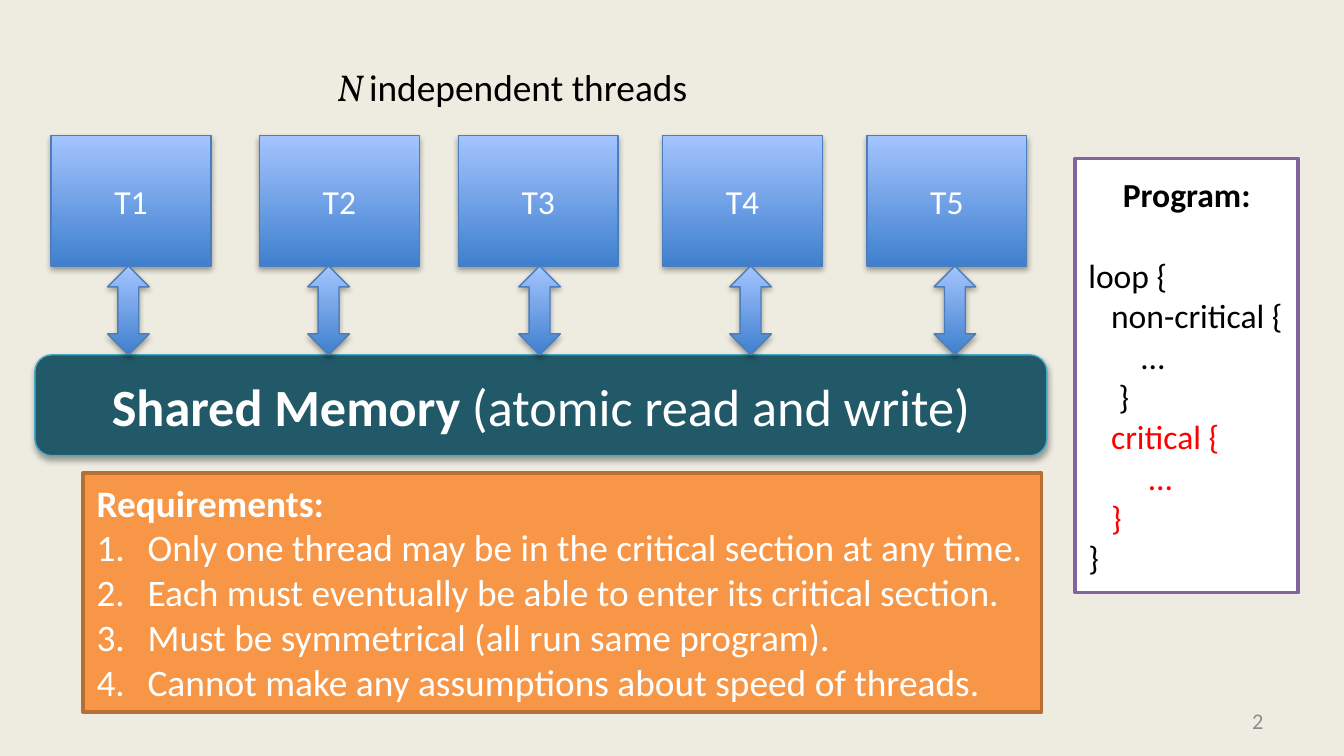
import pptx
import pptx.util
import pptx.dml.color
import pptx.enum.shapes
import pptx.enum.text
import pptx.oxml
import pptx.oxml.ns

Inches, Pt = pptx.util.Inches, pptx.util.Pt
SHAPE = pptx.enum.shapes.MSO_SHAPE
ALIGN = pptx.enum.text.PP_ALIGN
ANCHOR = pptx.enum.text.MSO_ANCHOR

COLORS = {
    "background": "EEECE1", "black": "000000", "white": "FFFFFF", "red": "FF0000",
    "number": "8C8C8C", "blue dark": "3F80CE", "blue light": "A4C4FF",
    "blue line": "4B7EBC", "memory": "215968", "memory line": "46AAC5",
    "purple": "8064A2", "orange": "F79646", "orange line": "B76F34",
}

# Content: (thread name, left of its box, left of its arrow)
THREADS = [("T1", 0.38, 0.8), ("T2", 1.93, 2.29), ("T3", 3.41, 3.86),
           ("T4", 4.93, 5.43), ("T5", 6.45, 6.95)]
PROGRAM = [
    ("loop {", "black"),
    ("   non-critical {", "black"),
    ("       …", "black"),
    ("    }", "black"),
    ("   critical {", "red"),
    ("        …", "red"),
    ("   }", "red"),
    ("}", "black"),
]
REQUIREMENTS = [
    "Only one thread may be in the critical section at any time.",
    "Each must eventually be able to enter its critical section.",
    "Must be symmetrical (all run same program).",
    "Cannot make any assumptions about speed of threads.",
]
THREAD_TOP, THREAD_HEIGHT, MEMORY_TOP = 1.01, 0.97, 2.64


def rgb(name):
    return pptx.dml.color.RGBColor.from_string(COLORS[name])


def add_span(para, text, size=18, color="white", bold=False, italic=False, font="Calibri"):
    span = para.add_run()
    span.text = text
    span.font.size, span.font.name = Pt(size), font
    span.font.bold, span.font.italic = bold, italic
    span.font.color.rgb = rgb(color)


def add_box(page, kind, place, line, fill=None, width=0.75, shadow=False):
    """Add a shape; without a fill name it gets the blue gradient."""
    box = page.shapes.add_shape(kind, *map(Inches, place))
    if fill:
        box.fill.solid()
        box.fill.fore_color.rgb = rgb(fill)
    else:
        box.fill.gradient()
        box.fill.gradient_angle = 90
        for stop, name in zip(box.fill.gradient_stops, ("blue dark", "blue light")):
            stop.color.rgb = rgb(name)
    box.line.color.rgb = rgb(line)
    box.line.width = Pt(width)
    box.shadow.inherit = False
    if shadow:
        effects = box._element.spPr.find(pptx.oxml.ns.qn("a:effectLst"))
        effects.append(pptx.oxml.parse_xml(
            f'<a:outerShdw {pptx.oxml.ns.nsdecls("a")} blurRad="{Pt(3.1)}" '
            f'dist="{Pt(1.8)}" dir="5400000" rotWithShape="0">'
            '<a:srgbClr val="000000"><a:alpha val="35000"/></a:srgbClr></a:outerShdw>'))
    return box


def first_para(box, align=ALIGN.LEFT, anchor=ANCHOR.TOP, wrap=True):
    frame = box.text_frame
    frame.word_wrap, frame.vertical_anchor = wrap, anchor
    frame.paragraphs[0].alignment = align
    return frame.paragraphs[0]


def add_number(para):
    props = para._p.get_or_add_pPr()
    props.set("marL", str(Inches(0.38)))
    props.set("indent", str(-Inches(0.38)))
    for tag, name, value in (("buFont", "typeface", "+mj-lt"),
                             ("buAutoNum", "type", "arabicPeriod")):
        bullet = props.makeelement(pptx.oxml.ns.qn("a:" + tag), {name: value})
        props.append(bullet)


def main():
    # Widescreen page, 16:9
    deck = pptx.Presentation()
    deck.slide_width = Inches(10)
    deck.slide_height = deck.slide_width * 9 // 16
    page = deck.slides.add_slide(deck.slide_layouts[6])
    page.background.fill.solid()
    page.background.fill.fore_color.rgb = rgb("background")

    # Slide number
    box = page.shapes.add_textbox(*map(Inches, (7.17, 5.21, 2.33, 0.3)))
    add_span(first_para(box, ALIGN.RIGHT, ANCHOR.MIDDLE), "2", size=12, color="number")

    # Heading over the threads
    box = page.shapes.add_textbox(*map(Inches, (2.41, 0.43, 2.9, 0.44)))
    para = first_para(box, wrap=False)
    add_span(para, "N ", size=20, color="black", italic=True, font="Vollkorn")
    add_span(para, "independent threads", size=20, color="black")

    # Shared memory
    box = add_box(page, SHAPE.ROUNDED_RECTANGLE, (0.26, MEMORY_TOP, 7.53, 0.75),
                  "memory line", fill="memory", shadow=True)
    para = first_para(box, ALIGN.CENTER, ANCHOR.MIDDLE)
    add_span(para, "Shared Memory ", size=28, bold=True)
    add_span(para, "(atomic read and write)", size=28)

    # Threads and the arrows that tie them to the memory
    arrow_top = THREAD_TOP + THREAD_HEIGHT
    for name, left, arrow_left in THREADS:
        box = add_box(page, SHAPE.RECTANGLE, (left, THREAD_TOP, 1.19, THREAD_HEIGHT),
                      "blue line", shadow=True)
        add_span(first_para(box, ALIGN.CENTER, ANCHOR.MIDDLE), name)
        add_box(page, SHAPE.UP_DOWN_ARROW,
                (arrow_left, arrow_top, 0.31, MEMORY_TOP - arrow_top),
                "blue line", shadow=True)

    # Program
    box = add_box(page, SHAPE.RECTANGLE, (8, 1.18, 1.66, 3.23), "purple", fill="white", width=2)
    add_span(first_para(box, ALIGN.CENTER, ANCHOR.MIDDLE), "Program:", color="black", bold=True)
    for index, (text, color) in enumerate(PROGRAM):
        para = box.text_frame.add_paragraph()
        para.alignment = ALIGN.LEFT
        if index == 0:
            para.space_before = Pt(22)
        add_span(para, text, color=color)

    # Requirements
    box = add_box(page, SHAPE.RECTANGLE, (0.62, 3.52, 7.13, 1.78), "orange line",
                  fill="orange", width=2)
    add_span(first_para(box, wrap=False), "Requirements:", size=20, bold=True)
    for text in REQUIREMENTS:
        para = box.text_frame.add_paragraph()
        para.alignment = ALIGN.LEFT
        add_number(para)
        add_span(para, text, size=20)

    deck.save("out.pptx")


if __name__ == "__main__":
    main()
